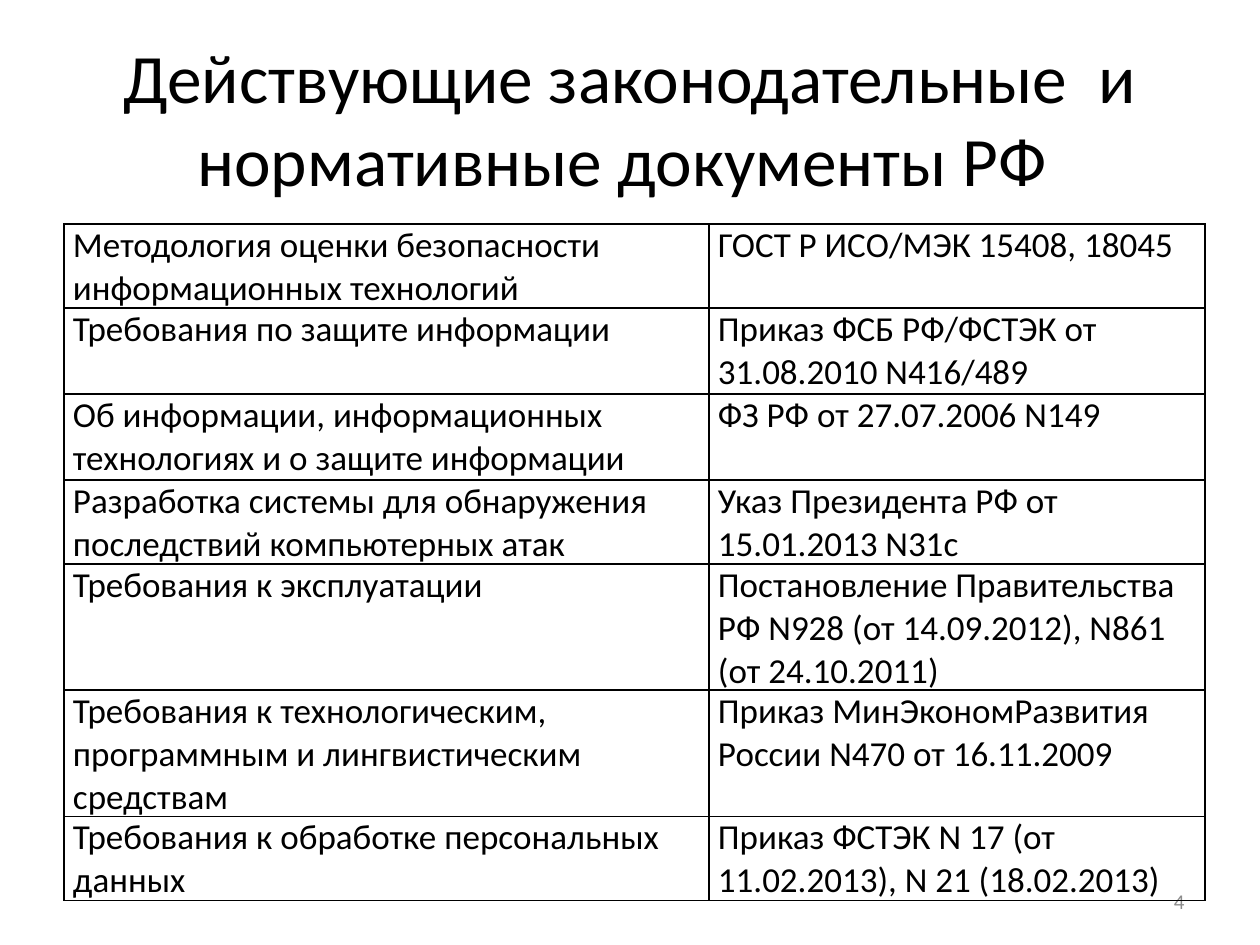
from lxml.etree import SubElement
from pptx import Presentation
from pptx.dml.color import RGBColor
from pptx.enum.text import MSO_ANCHOR as Anchor, PP_ALIGN as Align
from pptx.oxml.ns import qn
from pptx.util import Pt

TITLE = "Действующие законодательные  и нормативные документы РФ "
PAGE_NUMBER = "4"
DOCUMENTS = [
    ("Методология оценки безопасности информационных технологий",
     "ГОСТ Р ИСО/МЭК 15408, 18045"),
    ("Требования по защите информации",
     "Приказ ФСБ РФ/ФСТЭК от 31.08.2010 N416/489"),
    ("Об информации, информационных технологиях и о защите информации",
     "ФЗ РФ от 27.07.2006 N149"),
    ("Разработка системы для обнаружения последствий компьютерных атак",
     "Указ Президента РФ от 15.01.2013 N31c"),
    ("Требования к эксплуатации",
     "Постановление Правительства РФ N928 (от 14.09.2012), N861 (от 24.10.2011)"),
    ("Требования к технологическим, программным и лингвистическим средствам",
     "Приказ МинЭкономРазвития России N470 от 16.11.2009"),
    ("Требования к обработке персональных данных",
     "Приказ ФСТЭК N 17 (от 11.02.2013), N 21 (18.02.2013)"),
]
COLUMN_WIDTHS = [645, 496]
ROW_HEIGHTS = [81, 86, 86, 83, 120, 122, 81]
COLORS = {"text": "000000", "border": "000000", "number": "8C8C8C"}
FONT = "Calibri"
EMU_PER_PX = 914400 // 126


def px(*lengths):
    return [length * EMU_PER_PX for length in lengths]


def style_text(text_frame, size, color, align):
    for paragraph in text_frame.paragraphs:
        paragraph.alignment = align
        for run in paragraph.runs:
            run.font.name = FONT
            run.font.size = Pt(size)
            run.font.color.rgb = RGBColor.from_string(COLORS[color])


def add_text(slide, text, box, size, color, align):
    text_frame = slide.shapes.add_textbox(*px(*box)).text_frame
    text_frame.word_wrap = True
    text_frame.vertical_anchor = Anchor.MIDDLE
    text_frame.text = text
    style_text(text_frame, size, color, align)


def add_borders(cell):
    properties = cell._tc.get_or_add_tcPr()
    for side in ("a:lnL", "a:lnR", "a:lnT", "a:lnB"):
        line = SubElement(properties, qn(side), w=str(Pt(1)))
        fill = SubElement(line, qn("a:solidFill"))
        SubElement(fill, qn("a:srgbClr"), val=COLORS["border"])


def add_documents(slide):
    box = px(64, 224, sum(COLUMN_WIDTHS), sum(ROW_HEIGHTS))
    table = slide.shapes.add_table(len(DOCUMENTS), len(COLUMN_WIDTHS), *box).table
    table.first_row = table.horz_banding = False
    for column, width in zip(table.columns, px(*COLUMN_WIDTHS)):
        column.width = width
    for row, height, texts in zip(table.rows, px(*ROW_HEIGHTS), DOCUMENTS):
        row.height = height
        for cell, text in zip(row.cells, texts):
            cell.text = text
            cell.margin_left, cell.margin_right = px(9, 9)
            cell.margin_top = cell.margin_bottom = 0
            style_text(cell.text_frame, 20, "text", Align.LEFT)
            add_borders(cell)
            cell.fill.background()


def main():
    presentation = Presentation()
    presentation.slide_width, presentation.slide_height = px(1260, 945)
    slide = presentation.slides.add_slide(presentation.slide_layouts[6])
    add_text(slide, TITLE, (63, 38, 1134, 158), 39.6, "text", Align.CENTER)
    add_text(slide, PAGE_NUMBER, (903, 876, 294, 50), 12, "number", Align.RIGHT)
    add_documents(slide)
    presentation.save("out.pptx")


if __name__ == "__main__":
    main()
